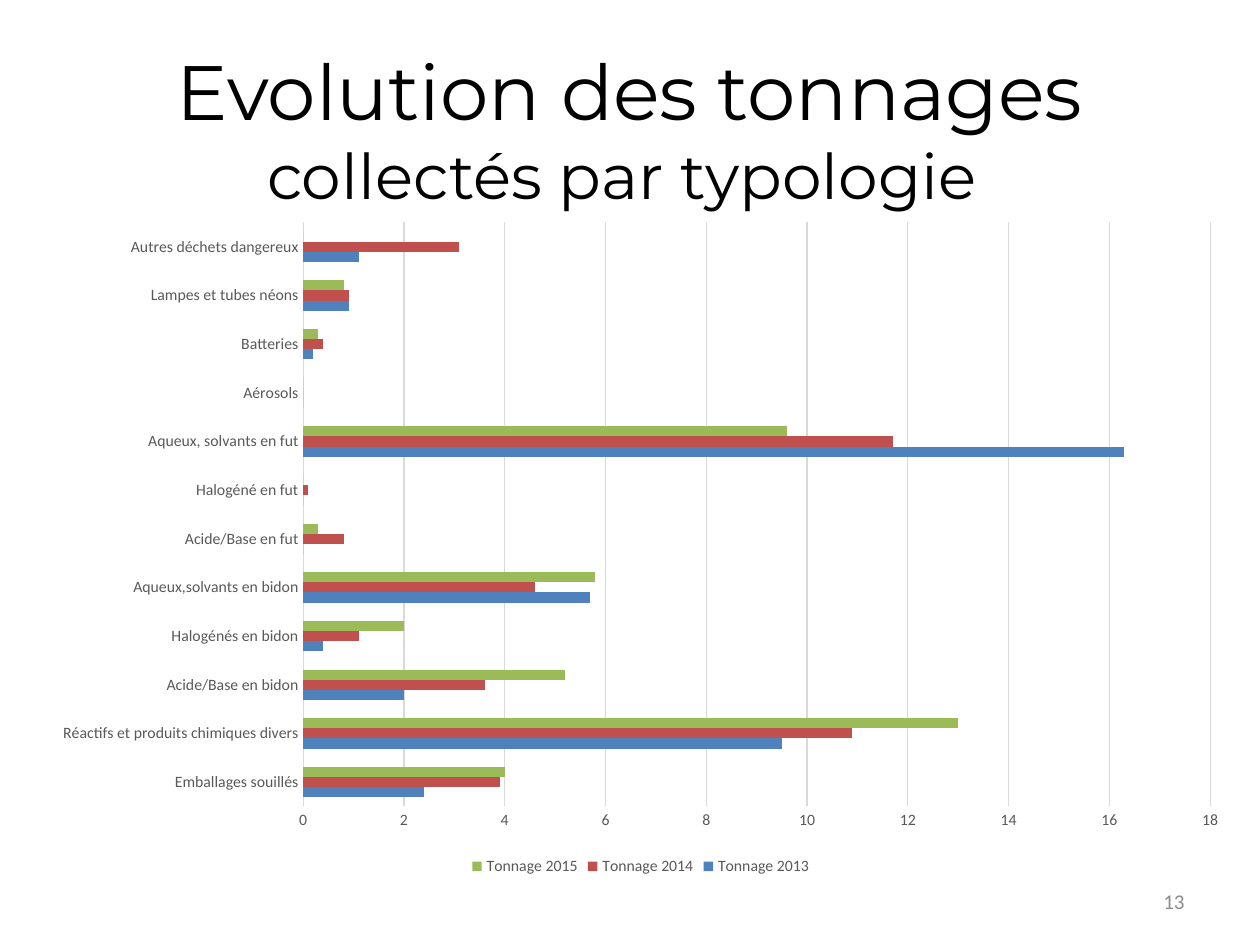
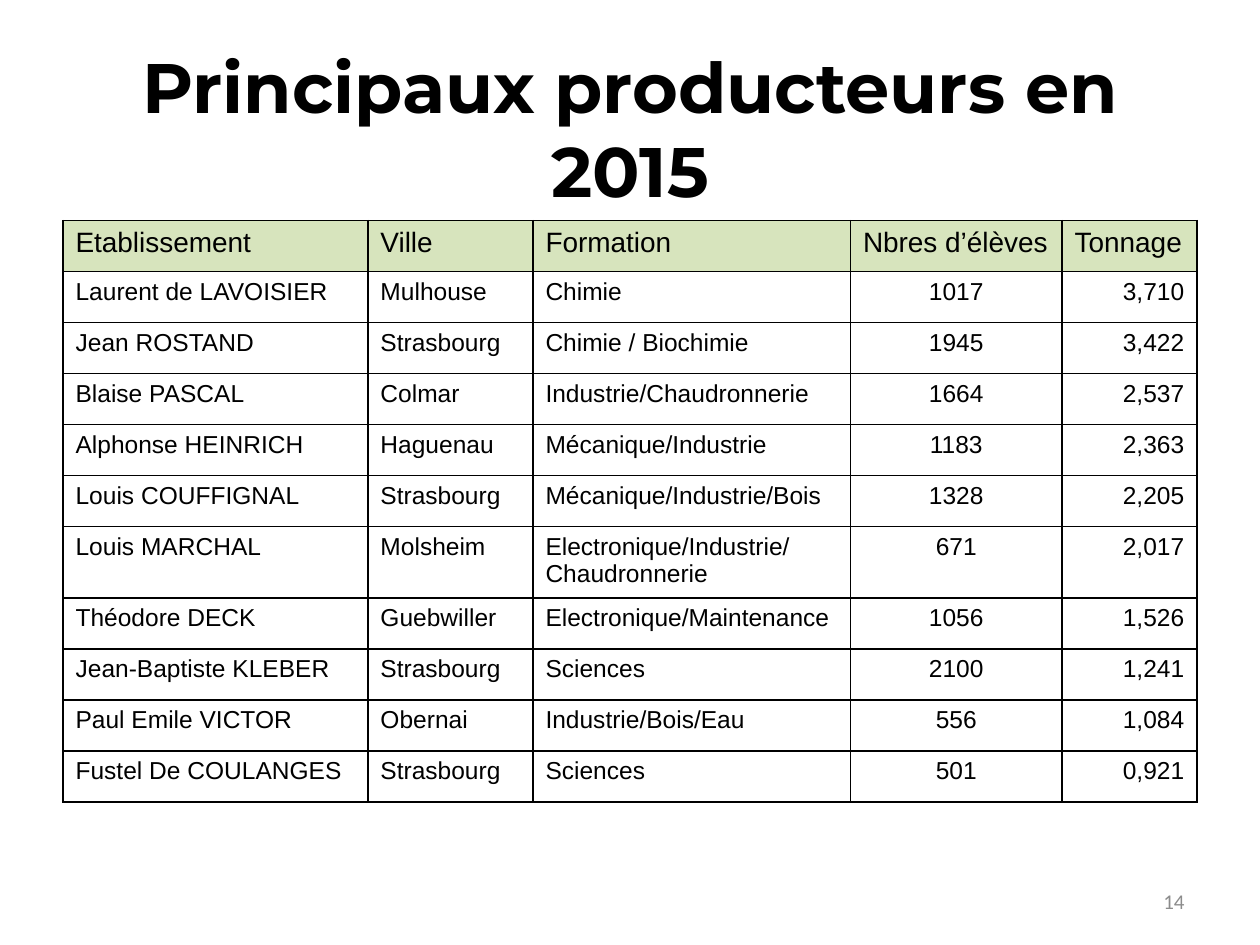
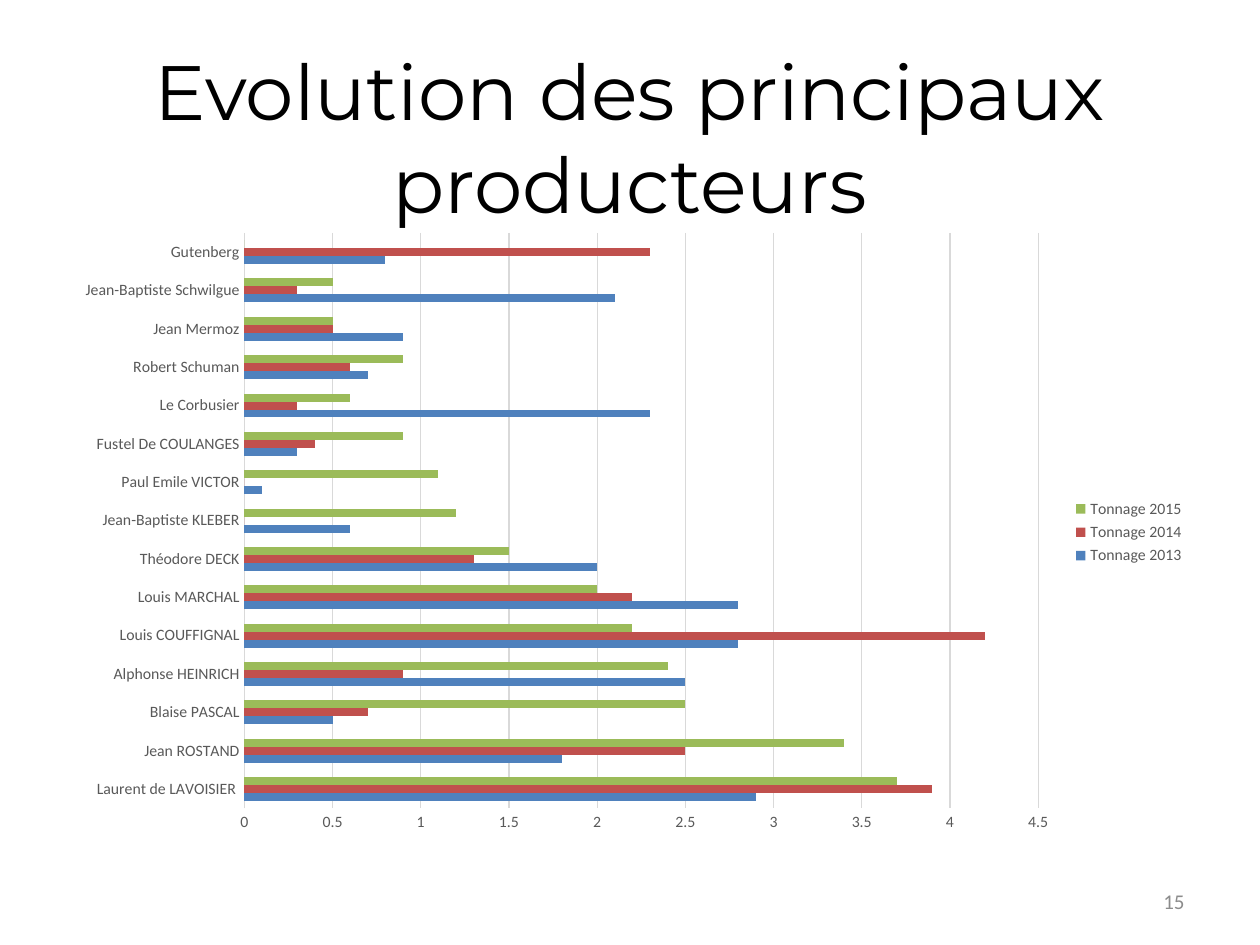
from lxml import etree
from pptx import Presentation
from pptx.chart.data import CategoryChartData
from pptx.dml.color import RGBColor
from pptx.enum.chart import XL_CHART_TYPE, XL_LEGEND_POSITION, XL_TICK_MARK
from pptx.enum.text import MSO_ANCHOR, PP_ALIGN
from pptx.oxml.ns import qn
from pptx.util import Inches, Pt

BAR_CLUSTERED = XL_CHART_TYPE.BAR_CLUSTERED
LEGEND_BOTTOM, LEGEND_RIGHT = XL_LEGEND_POSITION.BOTTOM, XL_LEGEND_POSITION.RIGHT
NO_TICK = XL_TICK_MARK.NONE
LEFT, CENTER, RIGHT = PP_ALIGN.LEFT, PP_ALIGN.CENTER, PP_ALIGN.RIGHT
TOP, MIDDLE = MSO_ANCHOR.TOP, MSO_ANCHOR.MIDDLE

COLORS = {
    "text": "000000",
    "page_number": "8C8C8C",
    "chart_text": "595959",
    "grid": "D9D9D9",
    "header": "D7E4BD",
    "Tonnage 2013": "4F81BD",
    "Tonnage 2014": "C0504D",
    "Tonnage 2015": "9BBB59",
}
TITLE_FONT, TABLE_FONT, BASE_FONT = "Montserrat", "Arial", "Calibri"

WASTE_TYPES = [
    "Emballages souillés", "Réactifs et produits chimiques divers",
    "Acide/Base en bidon", "Halogénés en bidon", "Aqueux,solvants en bidon",
    "Acide/Base en fut", "Halogéné en fut", "Aqueux, solvants en fut",
    "Aérosols", "Batteries", "Lampes et tubes néons", "Autres déchets dangereux",
]
WASTE_TONNAGES = {
    "Tonnage 2013": [2.4, 9.5, 2, 0.4, 5.7, 0, 0, 16.3, 0, 0.2, 0.9, 1.1],
    "Tonnage 2014": [3.9, 10.9, 3.6, 1.1, 4.6, 0.8, 0.1, 11.7, 0, 0.4, 0.9, 3.1],
    "Tonnage 2015": [4, 13, 5.2, 2, 5.8, 0.3, 0, 9.6, 0, 0.3, 0.8, 0],
}
PRODUCERS = [
    "Laurent de LAVOISIER ", "Jean ROSTAND", "Blaise PASCAL", "Alphonse HEINRICH",
    "Louis COUFFIGNAL", "Louis MARCHAL", "Théodore DECK", "Jean-Baptiste KLEBER",
    "Paul Emile VICTOR", "Fustel De COULANGES", "Le Corbusier", "Robert Schuman",
    "Jean Mermoz", "Jean-Baptiste Schwilgue", "Gutenberg",
]
PRODUCER_TONNAGES = {
    "Tonnage 2013": [2.9, 1.8, 0.5, 2.5, 2.8, 2.8, 2, 0.6, 0.1, 0.3, 2.3, 0.7, 0.9, 2.1, 0.8],
    "Tonnage 2014": [3.9, 2.5, 0.7, 0.9, 4.2, 2.2, 1.3, 0, 0, 0.4, 0.3, 0.6, 0.5, 0.3, 2.3],
    "Tonnage 2015": [3.7, 3.4, 2.5, 2.4, 2.2, 2, 1.5, 1.2, 1.1, 0.9, 0.6, 0.9, 0.5, 0.5, 0],
}
PRODUCER_ROWS = [
    ("Etablissement", "Ville", "Formation", "Nbres d’élèves", "Tonnage"),
    ("Laurent de LAVOISIER", "Mulhouse", "Chimie", "1017", "3,710"),
    ("Jean ROSTAND", "Strasbourg", "Chimie / Biochimie", "1945", "3,422"),
    ("Blaise PASCAL", "Colmar", "Industrie/Chaudronnerie", "1664", "2,537"),
    ("Alphonse HEINRICH", "Haguenau", "Mécanique/Industrie", "1183", "2,363"),
    ("Louis COUFFIGNAL", "Strasbourg", "Mécanique/Industrie/Bois", "1328", "2,205"),
    ("Louis MARCHAL", "Molsheim", "Electronique/Industrie/\nChaudronnerie", "671", "2,017"),
    ("Théodore DECK", "Guebwiller", "Electronique/Maintenance", "1056", "1,526"),
    ("Jean-Baptiste KLEBER", "Strasbourg", "Sciences", "2100", "1,241"),
    ("Paul Emile VICTOR", "Obernai", "Industrie/Bois/Eau", "556", "1,084"),
    ("Fustel De COULANGES", "Strasbourg", "Sciences", "501", "0,921"),
]
COLUMN_WIDTHS = [2.42, 1.31, 2.52, 1.68, 1.07]
COLUMN_ALIGNMENTS = [LEFT, LEFT, LEFT, CENTER, RIGHT]


def rgb(name):
    return RGBColor.from_string(COLORS[name])


def style_font(font, name, size, color, bold=False):
    font.name = name
    font.size = Pt(size)
    font.bold = bold
    font.color.rgb = rgb(color)


def add_text(slide, text, box, align, anchor):
    """Add a one-paragraph text box and return the paragraph."""
    frame = slide.shapes.add_textbox(*map(Inches, box)).text_frame
    frame.word_wrap = True
    frame.vertical_anchor = anchor
    paragraph = frame.paragraphs[0]
    paragraph.text = text
    paragraph.alignment = align
    return paragraph


def add_title(slide, text, sizes, bold=False):
    """Add the title; each line split by a vertical tab has its own size."""
    title = add_text(slide, text, (0.5, 0.3, 9, 1.36), CENTER, TOP)
    for run, size in zip(title.runs, sizes):
        style_font(run.font, TITLE_FONT, size, "text", bold)


def add_page_number(slide, number):
    page = add_text(slide, str(number), (7.17, 6.95, 2.33, 0.4), RIGHT, MIDDLE)
    style_font(page.runs[0].font, BASE_FONT, 12, "page_number")


def style_axis(axis):
    axis.major_tick_mark = axis.minor_tick_mark = NO_TICK
    style_font(axis.tick_labels.font, BASE_FONT, 9, "chart_text")


def style_grid_line(line):
    line.color.rgb = rgb("grid")
    line.width = Pt(0.75)


def add_tonnage_chart(slide, categories, tonnages, box, legend_position, maximum, step):
    data = CategoryChartData()
    data.categories = categories
    for year, values in tonnages.items():
        data.add_series(year, values)
    chart = slide.shapes.add_chart(BAR_CLUSTERED, *map(Inches, box), data).chart
    style_font(chart.font, BASE_FONT, 10, "text")
    chart.has_title = False

    chart.has_legend = True
    chart.legend.position = legend_position
    chart.legend.include_in_layout = False
    style_font(chart.legend.font, BASE_FONT, 9, "chart_text")

    plot = chart.plots[0]
    plot.gap_width = 182
    plot.overlap = 0
    plot.vary_by_categories = False
    for series in plot.series:
        series.format.fill.solid()
        series.format.fill.fore_color.rgb = rgb(series.name)

    style_axis(chart.category_axis)
    style_grid_line(chart.category_axis.format.line)
    value_axis = chart.value_axis
    style_axis(value_axis)
    value_axis.minimum_scale = 0
    value_axis.maximum_scale = maximum
    value_axis.major_unit = step
    value_axis.format.line.fill.background()
    value_axis.has_major_gridlines = True
    style_grid_line(value_axis.major_gridlines.format.line)


def add_cell_borders(cell):
    properties = cell._tc.get_or_add_tcPr()
    for side in ("a:lnL", "a:lnR", "a:lnT", "a:lnB"):
        border = etree.SubElement(properties, qn(side), w=str(Pt(1)))
        fill = etree.SubElement(border, qn("a:solidFill"))
        etree.SubElement(fill, qn("a:srgbClr"), val=COLORS["text"])


def fill_cell(cell, text, align, is_header):
    add_cell_borders(cell)
    if is_header:
        cell.fill.solid()
        cell.fill.fore_color.rgb = rgb("header")
    else:
        cell.fill.background()
    cell.text_frame.text = text
    for paragraph in cell.text_frame.paragraphs:
        paragraph.alignment = LEFT if is_header else align
        style_font(paragraph.runs[0].font, TABLE_FONT, 16 if is_header else 14, "text")


def add_producer_table(slide):
    row_height = Inches(4.05) // 10
    table = slide.shapes.add_table(
        len(PRODUCER_ROWS), len(COLUMN_WIDTHS), Inches(0.5), Inches(1.75),
        Inches(9), row_height * len(PRODUCER_ROWS)).table
    table.first_row = table.horz_banding = False
    for column, width in zip(table.columns, COLUMN_WIDTHS):
        column.width = Inches(width)
    for index, (row, texts) in enumerate(zip(table.rows, PRODUCER_ROWS)):
        row.height = row_height
        for cell, text, align in zip(row.cells, texts, COLUMN_ALIGNMENTS):
            fill_cell(cell, text, align, index == 0)


def main():
    presentation = Presentation()
    presentation.slide_width = Inches(10)
    presentation.slide_height = Inches(7.5)
    blank = presentation.slide_layouts[6]
    by_type, producers, by_producer = [presentation.slides.add_slide(blank) for _ in range(3)]

    add_title(by_type, "Evolution des tonnages\vcollectés par typologie ", [44, 36])
    add_tonnage_chart(by_type, WASTE_TYPES, WASTE_TONNAGES,
                      (0.31, 1.66, 9.55, 5.33), LEGEND_BOTTOM, 18, 2)

    add_title(producers, "Principaux producteurs en 2015", [40], bold=True)
    add_producer_table(producers)

    add_title(by_producer, "Evolution des principaux producteurs", [44])
    add_tonnage_chart(by_producer, PRODUCERS, PRODUCER_TONNAGES,
                      (0.5, 1.75, 9, 4.95), LEGEND_RIGHT, 4.5, 0.5)

    for number, slide in enumerate(presentation.slides, start=13):
        add_page_number(slide, number)
    presentation.save("out.pptx")


if __name__ == "__main__":
    main()
